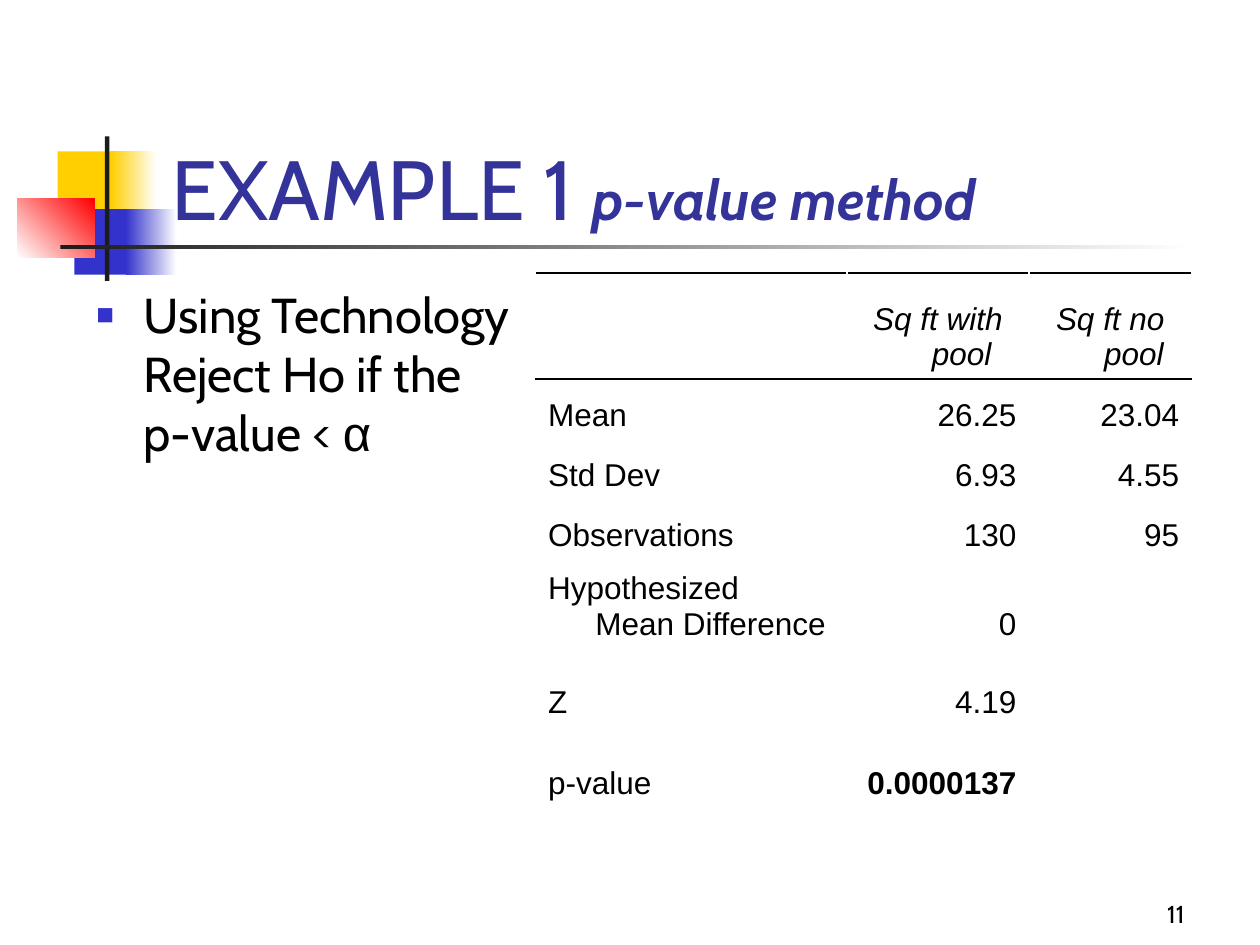
from lxml import etree
from pptx import Presentation
from pptx.dml.color import RGBColor
from pptx.enum.shapes import MSO_SHAPE
from pptx.enum.text import MSO_ANCHOR, PP_ALIGN
from pptx.oxml.ns import qn
from pptx.util import Pt

RECT = MSO_SHAPE.RECTANGLE
TOP, BOTTOM = MSO_ANCHOR.TOP, MSO_ANCHOR.BOTTOM
LEFT, CENTER, RIGHT = PP_ALIGN.LEFT, PP_ALIGN.CENTER, PP_ALIGN.RIGHT

COLORS = {
    "gold": "FFCF01",
    "blue": "3333CC",
    "red": "FF0000",
    "white": "FFFFFF",
    "dark": "1C1C1C",
    "title": "333399",
    "black": "000000",
}
HANG = 27

# left, top, width, height, colours, gradient angle
DECOR = [
    (33, 86.5, 35, 37.5, ["gold"], 0),
    (63.5, 86.5, 26, 37.5, ["gold", "white"], 0),
    (42.5, 119.5, 33, 37.5, ["blue"], 0),
    (72, 119.5, 29, 37.5, ["blue", "white"], 0),
    (10, 113.5, 44, 33.5, ["white", "red"], 45),
    (60, 78, 2.5, 82.5, ["dark"], 0),
    (34.5, 140, 648, 2.5, ["dark", "white"], 0),
]
WIDTHS = [178, 104, 93]
HEIGHTS = [60.5, 34.5, 34.5, 34.5, 47, 45, 46]
ROWS = [
    ["", "Sq ft with pool", "Sq ft no pool"],
    ["Mean", "26.25", "23.04"],
    ["Std Dev", "6.93", "4.55"],
    ["Observations", "130", "95"],
    ["Hypothesized \vMean Difference", "0", ""],
    ["Z", "4.19", ""],
    ["p-value", "0.0000137", ""],
]


def rgb(name):
    return RGBColor.from_string(COLORS[name])


def add_block(slide, left, top, width, height, names, angle):
    """Add a borderless rectangle, plain or with a two-colour gradient."""
    block = slide.shapes.add_shape(RECT, Pt(left), Pt(top), Pt(width), Pt(height))
    block.shadow.inherit = False
    block.line.fill.background()
    if len(names) == 1:
        block.fill.solid()
        block.fill.fore_color.rgb = rgb(names[0])
        return
    block.fill.gradient()
    block.fill.gradient_angle = angle
    for stop, name in zip(block.fill.gradient_stops, names):
        stop.color.rgb = rgb(name)


def style(run, size, face="Cabin", color="black", bold=False, italic=False):
    font = run.font
    font.size, font.name = Pt(size), face
    font.bold, font.italic = bold, italic
    font.color.rgb = rgb(color)


def add_text(slide, left, top, width, height, text, anchor=TOP, align=LEFT):
    """Add a wrapping text box and return its paragraph."""
    box = slide.shapes.add_textbox(Pt(left), Pt(top), Pt(width), Pt(height))
    frame = box.text_frame
    frame.word_wrap = True
    frame.vertical_anchor = anchor
    para = frame.paragraphs[0]
    para.text = text
    para.alignment = align
    return para


def add_part(para, text):
    run = para.add_run()
    run.text = text
    return run


def hang(para):
    props = para._p.get_or_add_pPr()
    props.set("marL", str(Pt(HANG)))
    props.set("indent", str(-Pt(HANG)))
    return props


def add_bullet(para):
    props = hang(para)
    color = etree.SubElement(props, qn("a:buClr"))
    etree.SubElement(color, qn("a:srgbClr"), val=COLORS["blue"])
    etree.SubElement(props, qn("a:buSzPct"), val="60000")
    etree.SubElement(props, qn("a:buFont"), typeface="Arial")
    etree.SubElement(props, qn("a:buChar"), char="■")


def add_rules(cell, sides):
    """Draw black rules on the given cell sides, in the order T, B."""
    props = cell._tc.get_or_add_tcPr()
    for spot, side in enumerate(sides):
        line = etree.Element(qn("a:ln" + side), w=str(Pt(1)))
        fill = etree.SubElement(line, qn("a:solidFill"))
        etree.SubElement(fill, qn("a:srgbClr"), val=COLORS["black"])
        props.insert(spot, line)


def fill_cell(cell, text, row, col):
    cell.fill.background()
    cell.vertical_anchor = BOTTOM
    add_rules(cell, {0: "TB", 1: "T"}.get(row, ""))
    para = cell.text_frame.paragraphs[0]
    para.text = text
    para.alignment = CENTER if row == 0 else RIGHT if col else LEFT
    hang(para)
    bold = row == len(ROWS) - 1 and col > 0
    for run in para.runs:
        style(run, 18, "Arial", bold=bold, italic=row == 0)


def add_stats(slide, left, top):
    frame = slide.shapes.add_table(
        len(ROWS), len(WIDTHS), Pt(left), Pt(top), Pt(sum(WIDTHS)), Pt(sum(HEIGHTS))
    )
    table = frame.table
    table.first_row = table.horz_banding = False
    for column, width in zip(table.columns, WIDTHS):
        column.width = Pt(width)
    for row, (texts, height) in enumerate(zip(ROWS, HEIGHTS)):
        table.rows[row].height = Pt(height)
        for col, text in enumerate(texts):
            fill_cell(table.cell(row, col), text, row, col)


def main():
    deck = Presentation()
    deck.slide_width, deck.slide_height = Pt(720), Pt(540)
    slide = deck.slides.add_slide(deck.slide_layouts[6])

    for block in DECOR:
        add_block(slide, *block)

    number = add_text(slide, 534, 498, 150, 36, "11", BOTTOM, RIGHT)
    style(number.runs[0], 14)

    title = add_text(slide, 91, 49, 613, 90, "EXAMPLE 1 ", BOTTOM)
    style(title.runs[0], 48, color="title")
    style(add_part(title, "p-value method"), 32, color="title", bold=True, italic=True)

    body = add_text(
        slide, 48, 159, 264, 324, "Using Technology Reject Ho if the \vp-value < "
    )
    body.space_before = Pt(5.6)
    add_bullet(body)
    for run in body.runs:
        style(run, 28)
    style(add_part(body, "α"), 28, "Arial")

    add_stats(slide, 306, 156)
    deck.save("out.pptx")


if __name__ == "__main__":
    main()
